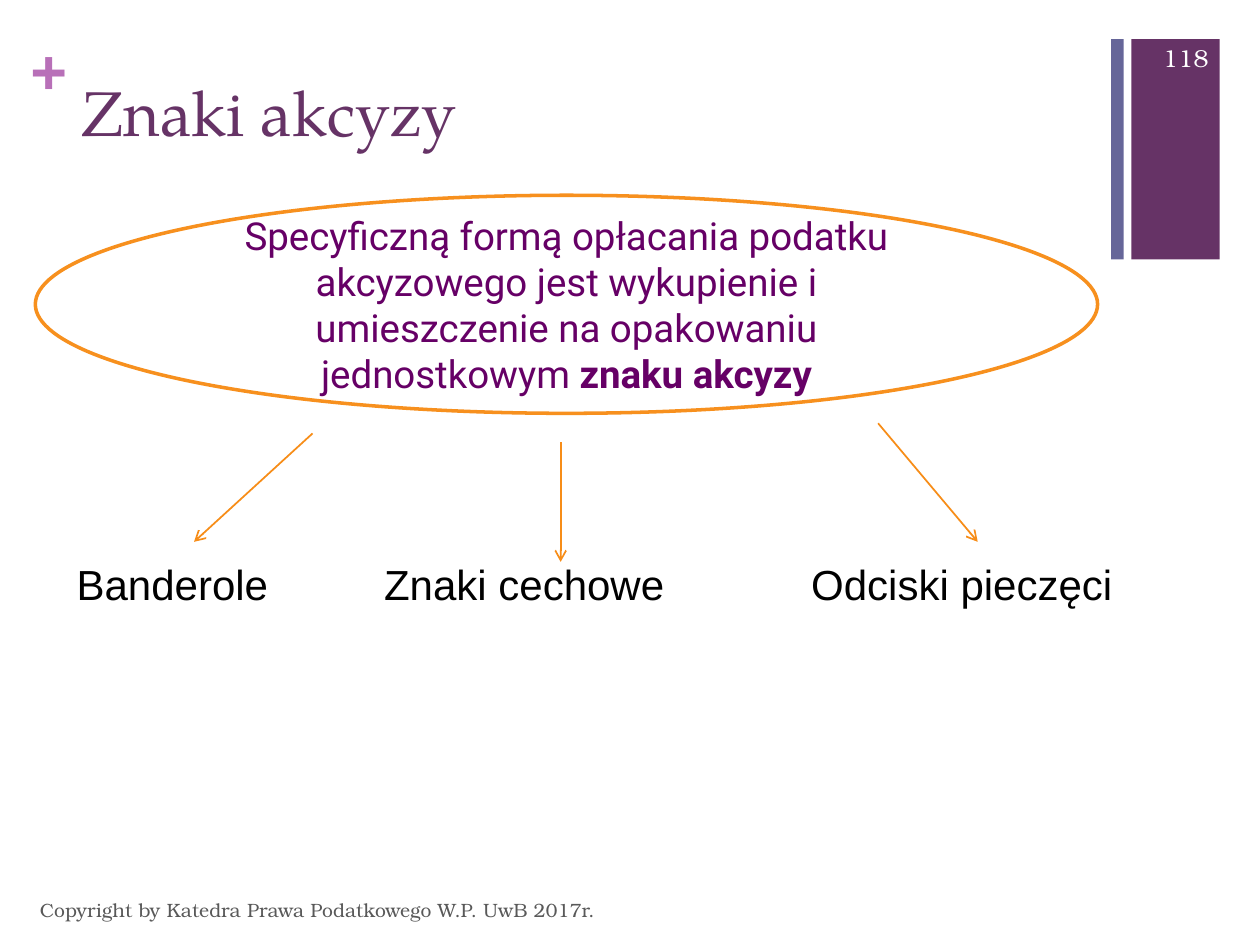
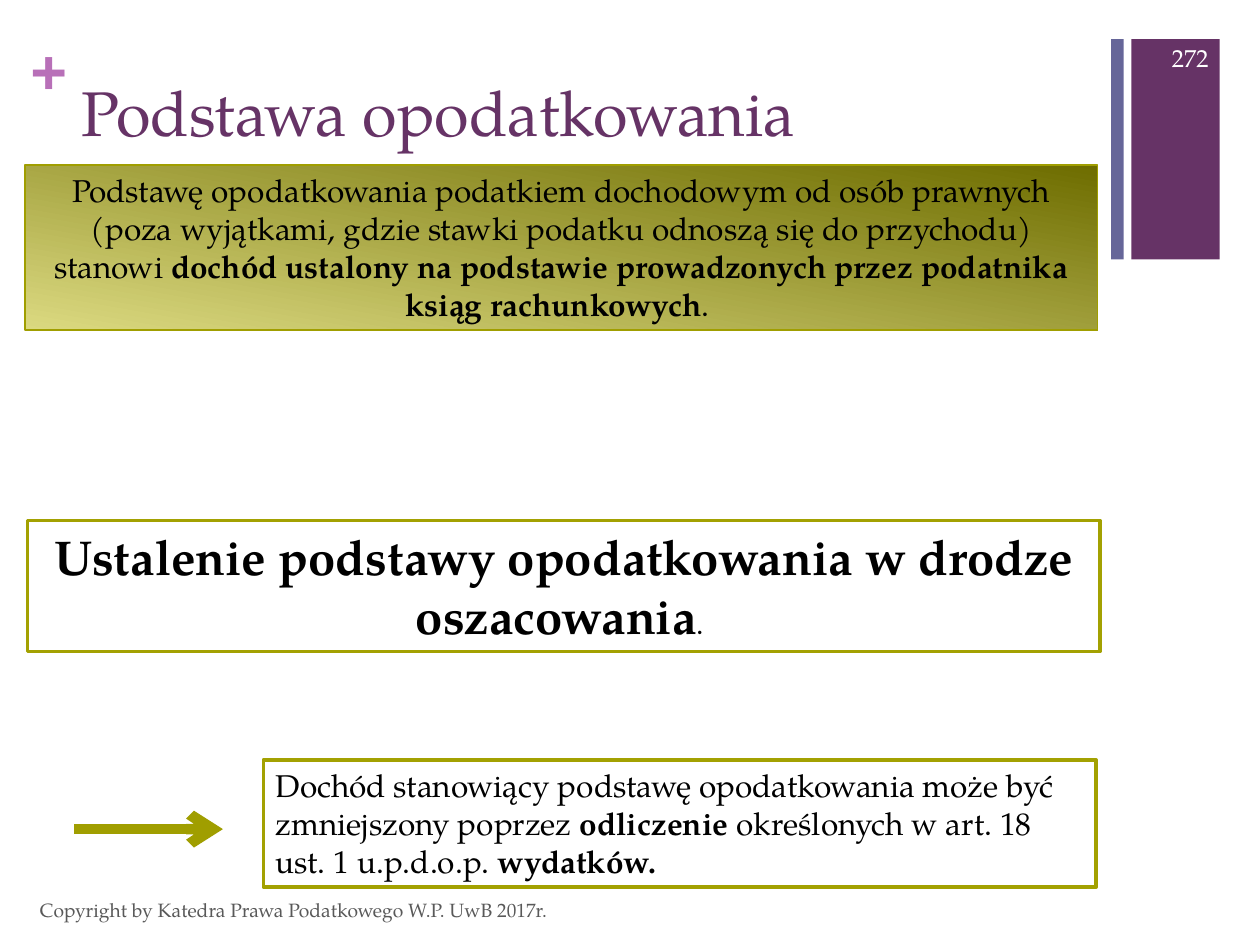
from pptx import Presentation
from pptx.dml.color import RGBColor
from pptx.enum.shapes import MSO_CONNECTOR, MSO_SHAPE
from pptx.enum.text import MSO_ANCHOR, PP_ALIGN
from pptx.oxml.ns import qn
from pptx.util import Pt
from lxml import etree

LEFT, MID, RIGHT = PP_ALIGN.LEFT, PP_ALIGN.CENTER, PP_ALIGN.RIGHT
TOP, HALF = MSO_ANCHOR.TOP, MSO_ANCHOR.MIDDLE
RECT, OVAL = MSO_SHAPE.RECTANGLE, MSO_SHAPE.OVAL
STRAIGHT = MSO_CONNECTOR.STRAIGHT

HEX = {
    "white": "FFFFFF", "black": "000000", "grey": "595959",
    "plum": "663366", "slate": "666699", "pink": "B870B8",
    "violet": "660066", "orange": "F7901E", "amber": "F78D18",
    "olive": "A09E00", "moss": "A3A101", "dark": "6E6D00", "light": "DBD980",
}
SANS, ROBO = "Arial", "Roboto"
BONUM, PAGELLA = "TeX Gyre Bonum", "TeX Gyre Pagella"

NOTE = "Copyright by Katedra Prawa Podatkowego W.P. UwB 2017r."
BANDS = [(646.5, 50.5, "plum"), (635, 7.2, "slate")]

STAMPS = [
    ("Specyficzną formą opłacania podatku akcyzowego jest wykupienie "
     "i umieszczenie na opakowaniu jednostkowym ", 22, False),
    ("znaku akcyzy", 22, True),
]
KINDS = [
    ("Banderole", 36.7, 125.3, False),
    ("Znaki cechowe", 212.4, 176.4, False),
    ("Odciski pieczęci", 456.5, 221, True),
]
RAYS = [
    (178.6, 247.7, 110.9, 309.6),
    (320.4, 252.7, 320.4, 321.1),
    (501.8, 241.9, 558.7, 309.6),
]

BASE = [
    ("Podstawę opodatkowania podatkiem dochodowym od osób prawnych "
     "(poza wyjątkami, gdzie stawki podatku odnoszą się do przychodu) "
     "stanowi ", 18, False),
    ("dochód ustalony na podstawie prowadzonych przez podatnika "
     "ksiąg rachunkowych", 18, True),
    (". ", 18, False),
]
GUESS = [
    ("Ustalenie podstawy opodatkowania w drodze oszacowania", 28, True),
    (". ", 17, False),
]
COSTS = [
    ("Dochód stanowiący podstawę opodatkowania może być zmniejszony "
     "poprzez ", 18, False),
    ("odliczenie", 18, True),
    (" określonych w art. 18 ust. 1 u.p.d.o.p. ", 18, False),
    ("wydatków.", 18, True),
]
FRAMES = [
    (BASE, (14.4, 94.3, 612.7, 94.3), MID, "olive", 1),
    (GUESS, (15.8, 297.4, 612.7, 74.9), MID, "moss", 2),
    (COSTS, (150.5, 434.2, 475.9, 72.7), LEFT, "moss", 2),
]


def rgb(name):
    return RGBColor.from_string(HEX[name])


def write(shape, runs, font, tint, align=LEFT, anchor=TOP, wrap=True, inset=None):
    frame = shape.text_frame
    frame.word_wrap = wrap
    frame.vertical_anchor = anchor
    if inset is not None:
        frame.margin_left = frame.margin_right = Pt(inset)
        frame.margin_top = frame.margin_bottom = Pt(inset)
    para = frame.paragraphs[0]
    para.alignment = align
    for text, size, bold in runs:
        run = para.add_run()
        run.text = text
        run.font.name = font
        run.font.size = Pt(size)
        run.font.bold = bold
        run.font.color.rgb = rgb(tint)


def label(slide, area, text, size, font, tint, bold=False, **look):
    box = slide.shapes.add_textbox(*map(Pt, area))
    write(box, [(text, size, bold)], font, tint, **look)


def block(slide, kind, area, fill, edge=None, width=1):
    shape = slide.shapes.add_shape(kind, *map(Pt, area))
    shape.shadow.inherit = False
    shape.fill.solid()
    shape.fill.fore_color.rgb = rgb(fill)
    if edge:
        shape.line.color.rgb = rgb(edge)
        shape.line.width = Pt(width)
    else:
        shape.line.fill.background()
    return shape


def arrow(slide, ends, tint, width):
    link = slide.shapes.add_connector(STRAIGHT, *map(Pt, ends))
    link.line.color.rgb = rgb(tint)
    link.line.width = Pt(width)
    tip = etree.SubElement(link.line._get_or_add_ln(), qn("a:tailEnd"))
    tip.set("type", "arrow")
    etree.SubElement(link._element.spPr, qn("a:effectLst"))


def page(deck, title, number, font):
    slide = deck.slides.add_slide(deck.slide_layouts[6])
    for left, width, fill in BANDS:
        block(slide, RECT, (left, 22.3, width, 126), fill)
    label(slide, (17.3, 18, 20.9, 43.9), "+", 36, SANS, "pink", bold=True, inset=0)
    label(slide, (39.6, 38.2, 594.7, 87.8), title, 36, PAGELLA, "plum")
    label(slide, (15.8, 505.4, 482.4, 28.8), NOTE, 11, font, "grey", anchor=HALF)
    label(slide, (653.8, 18.7, 43.9, 28.8), number, 14, font, "white",
          align=RIGHT, anchor=HALF)
    return slide


def excise(deck):
    slide = page(deck, "Znaki akcyzy", "118", BONUM)
    oval = block(slide, OVAL, (20.2, 111.6, 607, 124.6), "white", "orange", 2)
    write(oval, STAMPS, ROBO, "violet", MID, HALF)
    for text, left, width, wrap in KINDS:
        label(slide, (left, 315.4, width, 36), text, 24, SANS, "black", wrap=wrap)
    for ends in RAYS:
        arrow(slide, ends, "amber", 1)


def income(deck):
    slide = page(deck, "Podstawa opodatkowania", "272", PAGELLA)
    for runs, area, align, edge, width in FRAMES:
        box = block(slide, RECT, area, "white", edge, width)
        write(box, runs, PAGELLA, "black", align)
        if runs is BASE:
            box.fill.gradient()
            box.fill.gradient_angle = 260
            for stop, place, tint in zip(box.fill.gradient_stops, (0, 1),
                                         ("dark", "light")):
                stop.position = place
                stop.color.rgb = rgb(tint)
    arrow(slide, (42.5, 473.8, 127.4, 473.8), "olive", 6)


def main():
    deck = Presentation()
    deck.slide_width, deck.slide_height = Pt(720), Pt(540)
    excise(deck)
    income(deck)
    deck.save("out.pptx")


if __name__ == "__main__":
    main()
